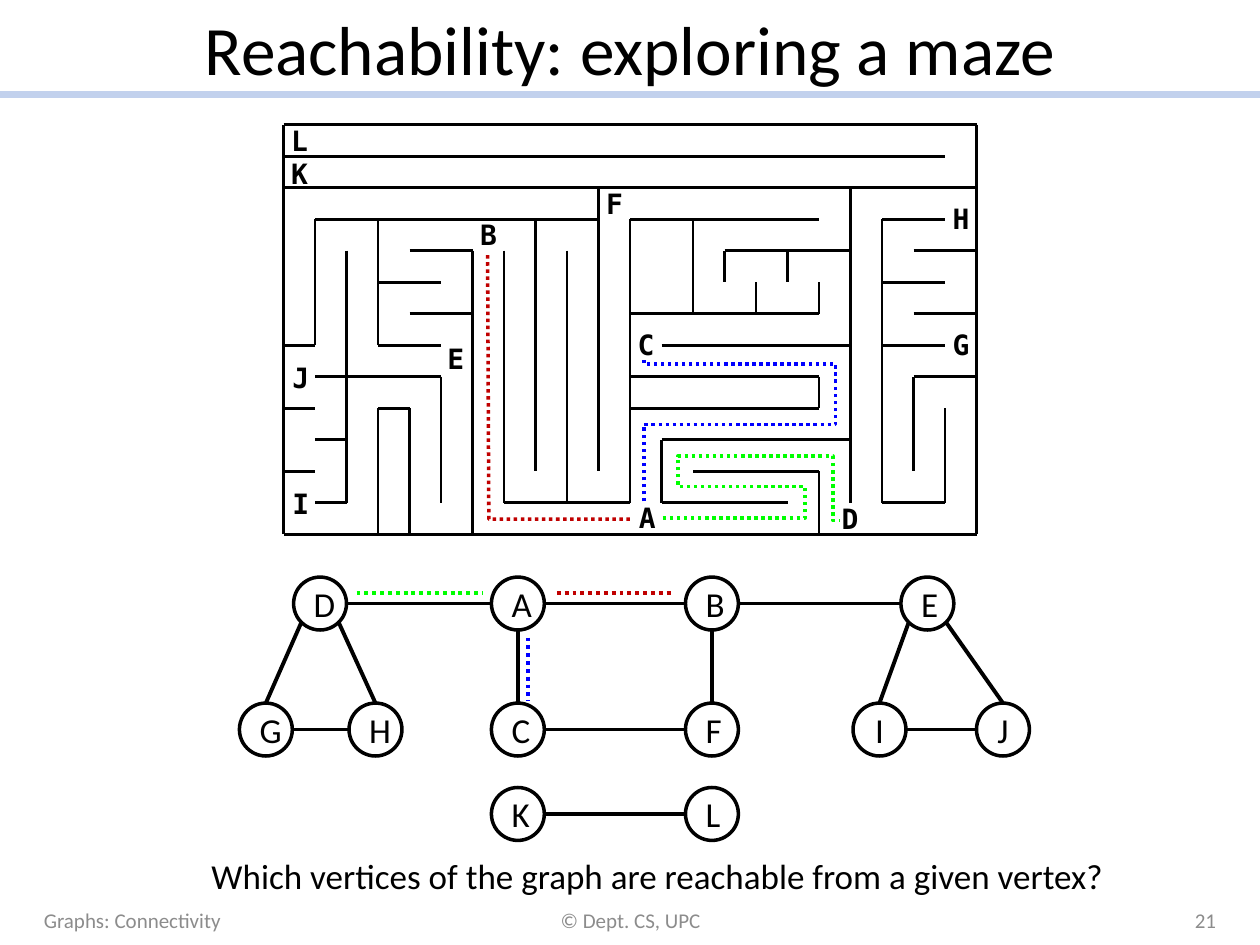
from pptx import Presentation
from pptx.dml.color import RGBColor
from pptx.enum.dml import MSO_LINE
from pptx.enum.shapes import MSO_CONNECTOR, MSO_SHAPE
from pptx.enum.text import MSO_ANCHOR, PP_ALIGN
from pptx.oxml.ns import qn
from pptx.util import Inches, Pt
from lxml.etree import SubElement

COLORS = {"ink": "000000", "paper": "FFFFFF", "rule": "C2D1ED", "footer": "8C8C8C",
          "red": "C00000", "green": "00FF00", "blue": "0000FF"}
CELL = 0.25
ROW_WALLS = {
    0: [(0, 22)], 1: [(0, 21)], 2: [(0, 22)],
    3: [(1, 10), (11, 17), (19, 21)], 4: [(4, 6), (14, 18), (20, 22)],
    5: [(3, 5), (19, 21)], 6: [(4, 6), (11, 17), (20, 22)],
    7: [(0, 1), (3, 5), (12, 18), (19, 21)], 8: [(1, 5), (11, 17), (20, 22)],
    9: [(0, 1), (3, 4), (11, 17)], 10: [(1, 2), (12, 18)],
    11: [(0, 1), (13, 17)], 12: [(1, 2), (7, 11), (12, 16), (19, 21)], 13: [(0, 22)],
}
COLUMN_WALLS = {
    0: [(0, 13)], 1: [(3, 7)], 2: [(4, 12)], 3: [(3, 7), (9, 13)], 4: [(9, 13)],
    5: [(8, 12)], 6: [(4, 13)], 7: [(4, 12)], 8: [(3, 11)], 9: [(4, 12)],
    10: [(2, 11)], 11: [(3, 12)], 12: [(10, 12)], 13: [(3, 6)], 14: [(4, 5)],
    15: [(5, 6)], 16: [(4, 5)], 17: [(5, 6), (8, 9), (11, 13)], 18: [(2, 12)],
    19: [(3, 12)], 20: [(8, 11)], 21: [(9, 12)], 22: [(0, 13)],
}
ROOMS = {"L": (0.06, -0.01), "K": (0.06, 0.25), "B": (1.56, 0.74), "F": (2.56, 0.49),
         "H": (5.31, 0.61), "G": (5.31, 1.61), "E": (1.3, 1.72), "C": (2.81, 1.61),
         "J": (0.07, 1.87), "I": (0.07, 2.87), "D": (4.43, 2.99), "A": (2.82, 2.98)}
ROUTES = {
    "red": [(2.75, 3.13), (1.63, 3.13), (1.62, 1.03)],
    "green": [(3.01, 3.12), (4.14, 3.12), (4.14, 2.87), (3.13, 2.87), (3.13, 2.63),
              (4.36, 2.63), (4.36, 3.14), (4.42, 3.14)],
    "blue": [(2.86, 2.99), (2.86, 2.38), (4.38, 2.38), (4.38, 1.9), (2.86, 1.9), (2.86, 1.86)],
}
NODE = 0.42
NODES = {"D": (0.43, 0), "G": (0, 1), "H": (0.87, 1), "A": (2, 0), "C": (2, 1),
         "B": (3.54, 0), "F": (3.54, 1), "E": (5.25, 0), "I": (4.87, 1), "J": (5.85, 1),
         "K": (2, 1.67), "L": (3.54, 1.67)}
SITES = {"top": (0.5, 0), "left": (0, 0.5), "right": (1, 0.5), "bottom": (0.5, 1),
         "lower left": (0.15, 0.85), "lower right": (0.85, 0.85)}
EDGES = {("right", "left"): ["GH", "DA", "AB", "BE", "CF", "IJ", "KL"],
         ("bottom", "top"): ["AC", "BF"],
         ("lower left", "top"): ["DG", "EI"],
         ("lower right", "top"): ["DH", "EJ"]}
TRAILS = {"red": [(2.52, 0.13), (3.43, 0.13)], "green": [(0.93, 0.13), (1.93, 0.13)],
          "blue": [(2.29, 0.48), (2.29, 0.98)]}


def rgb(name):
    """Return the named colour."""
    return RGBColor.from_string(COLORS[name])


def set_line(line, color, width, dotted=False):
    """Set colour, width and dash of a line."""
    line.color.rgb = rgb(color)
    line.width = Pt(width)
    if dotted:
        line.dash_style = MSO_LINE.ROUND_DOT


def add_line(shapes, start, end, color, width, dotted=False):
    """Add a straight line between two points in inches."""
    line = shapes.add_connector(MSO_CONNECTOR.STRAIGHT, *map(Inches, (*start, *end)))
    set_line(line.line, color, width, dotted)
    SubElement(line._element.spPr, qn("a:effectLst"))


def write(tf, text, size, color="ink", font="Calibri", align=PP_ALIGN.LEFT, bold=False):
    """Write one styled paragraph into a text frame."""
    p = tf.paragraphs[0]
    p.text = text
    p.alignment = align
    p.font.size, p.font.name, p.font.bold = Pt(size), font, bold
    p.font.color.rgb = rgb(color)


def add_text(shapes, box, text, size, wrap=True, anchor=MSO_ANCHOR.MIDDLE, inset=None, **style):
    """Add a text box at the given place."""
    tf = shapes.add_textbox(*map(Inches, box)).text_frame
    tf.word_wrap = wrap
    tf.vertical_anchor = anchor
    if inset is not None:
        tf.margin_left = tf.margin_right = tf.margin_top = tf.margin_bottom = Inches(inset)
    write(tf, text, size, **style)


def shift(box, points):
    """Move points from the box to the slide."""
    return [(box[0] + x, box[1] + y) for x, y in points]


def add_frame(shapes, width, height):
    """Add the title, its rule and the footer."""
    add_line(shapes, (0, 0.75), (width, 0.75), "rule", 4)
    add_text(shapes, (0.5, 0, width - 1, 0.75), "Reachability: exploring a maze", 39.6,
             align=PP_ALIGN.CENTER)
    footers = [(0.25, 2.33, "Graphs: Connectivity", PP_ALIGN.LEFT),
               (3.42, 3.17, "© Dept. CS, UPC", PP_ALIGN.CENTER),
               (7.42, 2.33, "21", PP_ALIGN.RIGHT)]
    for x, w, text, align in footers:
        add_text(shapes, (x, height - 0.4, w, 0.4), text, 12, color="footer", align=align)


def add_graph(shapes, box):
    """Add the vertices and edges of the graph."""
    for name, place in NODES.items():
        [(x, y)] = shift(box, [place])
        sp = shapes.add_shape(MSO_SHAPE.OVAL, *map(Inches, (x, y, NODE, NODE)))
        sp.shadow.inherit = False
        sp.fill.solid()
        sp.fill.fore_color.rgb = rgb("paper")
        set_line(sp.line, "ink", 2)
        sp.text_frame.vertical_anchor = MSO_ANCHOR.MIDDLE
        write(sp.text_frame, name, 20, align=PP_ALIGN.CENTER)
    for sides, pairs in EDGES.items():
        for pair in pairs:
            ends = [(NODES[name][0] + NODE * SITES[side][0], NODES[name][1] + NODE * SITES[side][1])
                    for name, side in zip(pair, sides)]
            add_line(shapes, *shift(box, ends), "ink", 2.25)


def add_maze(shapes, box):
    """Add the walls and room letters of the maze."""
    walls = [((a, row), (b, row)) for row, spans in ROW_WALLS.items() for a, b in spans]
    walls += [((col, a), (col, b)) for col, spans in COLUMN_WALLS.items() for a, b in spans]
    for wall in walls:
        add_line(shapes, *shift(box, [(c * CELL, r * CELL) for c, r in wall]), "ink", 1.5)
    for name, place in ROOMS.items():
        [(x, y)] = shift(box, [place])
        add_text(shapes, (x, y, 0.12, 0.27), name, 16, wrap=False, anchor=MSO_ANCHOR.TOP,
                 inset=0, font="DejaVu Sans Mono", bold=True)


def add_route(shapes, color, maze_box, graph_box):
    """Add one dotted route through the maze and its trail beside the graph edge."""
    start, *rest = [(Inches(x), Inches(y)) for x, y in shift(maze_box, ROUTES[color])]
    builder = shapes.build_freeform(*start)
    builder.add_line_segments(rest, close=False)
    sp = builder.convert_to_shape()
    sp.shadow.inherit = False
    sp.fill.background()
    set_line(sp.line, color, 2, dotted=True)
    add_line(shapes, *shift(graph_box, TRAILS[color]), color, 2.25, dotted=True)


def main():
    """Build and save the slide."""
    prs = Presentation()
    prs.slide_width, prs.slide_height = Inches(10), Inches(7.5)
    s = prs.slides.add_slide(prs.slide_layouts[6])
    maze_box, graph_box = (2.25, 0.99), (1.9, 4.58)
    add_frame(s.shapes, 10, 7.5)
    add_graph(s.shapes.add_group_shape().shapes, graph_box)
    add_text(s.shapes, (1.58, 6.73, 7.35, 0.44),
             "Which vertices of the graph are reachable from a given vertex?", 20,
             wrap=False, anchor=MSO_ANCHOR.TOP)
    add_maze(s.shapes.add_group_shape().shapes, maze_box)
    for color in ROUTES:
        add_route(s.shapes.add_group_shape().shapes, color, maze_box, graph_box)
    prs.save("out.pptx")


if __name__ == "__main__":
    main()
